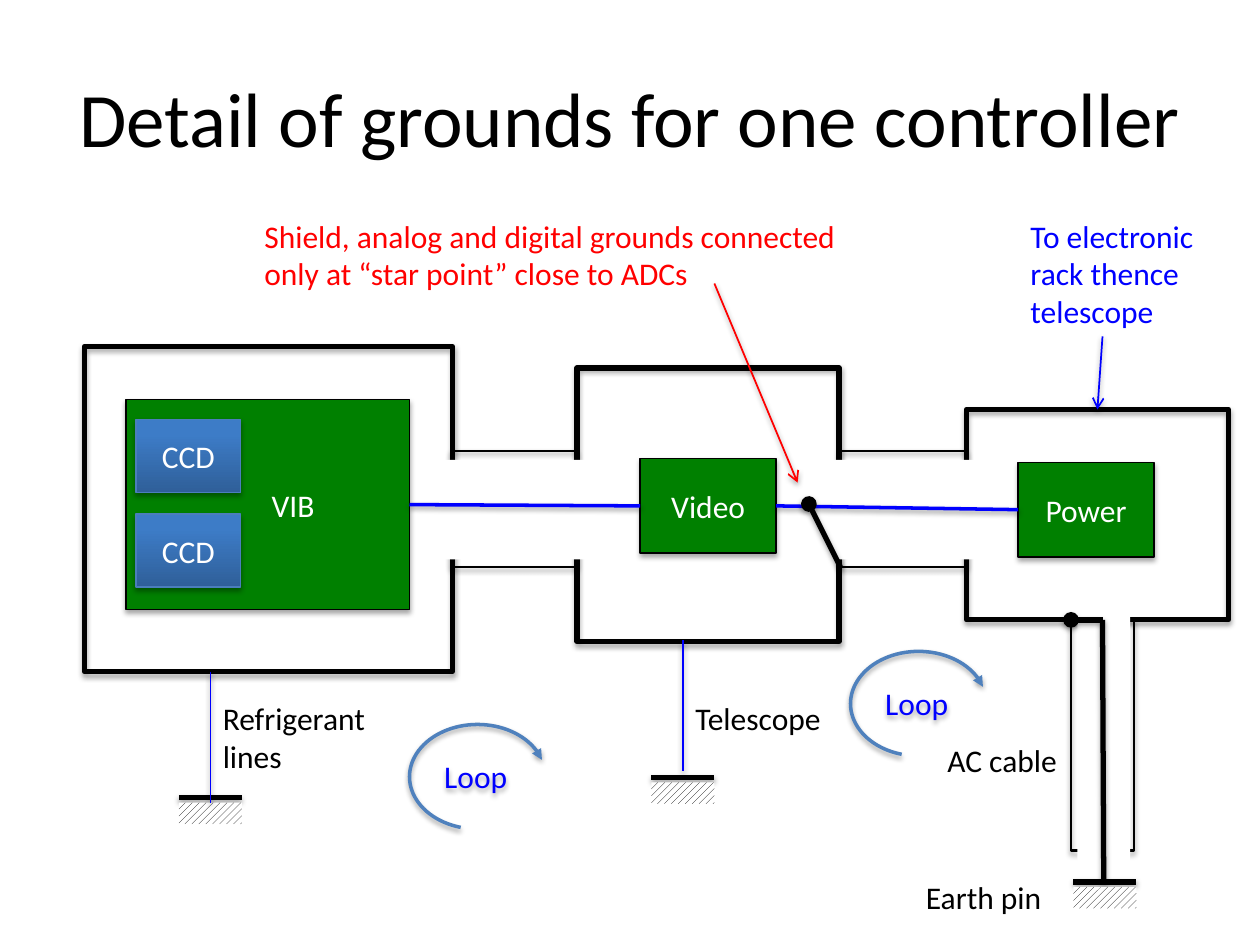
from lxml import etree
from pptx import Presentation
from pptx.dml.color import RGBColor
from pptx.enum.dml import MSO_PATTERN
from pptx.enum.shapes import MSO_CONNECTOR, MSO_SHAPE
from pptx.enum.text import MSO_ANCHOR, MSO_AUTO_SIZE, PP_ALIGN
from pptx.oxml.ns import qn
from pptx.util import Inches, Pt

RECTANGLE, ARC = MSO_SHAPE.RECTANGLE, MSO_SHAPE.ARC
STRAIGHT = MSO_CONNECTOR.STRAIGHT
HATCH = MSO_PATTERN.WIDE_UPWARD_DIAGONAL
MIDDLE, CENTER, LEFT = MSO_ANCHOR.MIDDLE, PP_ALIGN.CENTER, PP_ALIGN.LEFT
GROW = MSO_AUTO_SIZE.SHAPE_TO_FIT_TEXT
TOP_SIDE, LEFT_SIDE, RIGHT_SIDE = 0, 1, 3
BLACK, WHITE, BLUE, RED = "000000", "FFFFFF", "0000FF", "FF0000"
GREEN, STEEL = "008000", "4F81BD"


def color(value):
    """Turn a hex string into a colour."""
    return RGBColor.from_string(value)


def add_shadow(shape, distance=1.8, opacity=35):
    """Give a shape or connector a soft shadow straight below it."""
    properties = shape._element.spPr
    effects = properties.find(qn("a:effectLst"))
    if effects is None:
        effects = etree.SubElement(properties, qn("a:effectLst"))
    shadow = etree.SubElement(effects, qn("a:outerShdw"), blurRad=str(Pt(3.1)),
                              dist=str(Pt(distance)), dir="5400000", rotWithShape="0")
    tint = etree.SubElement(shadow, qn("a:srgbClr"), val=BLACK)
    etree.SubElement(tint, qn("a:alpha"), val=str(opacity * 1000))


def add_tail(shape, kind):
    """Put an arrowhead at the end of a line."""
    etree.SubElement(shape.line._get_or_add_ln(), qn("a:tailEnd"), type=kind)


def write(shape, text, ink, size=18, align=LEFT):
    """Write one paragraph into a shape."""
    shape.text_frame.word_wrap = True
    para = shape.text_frame.paragraphs[0]
    para.text = text
    para.alignment = align
    para.font.name = "Calibri"
    para.font.size = Pt(size)
    para.font.color.rgb = color(ink)


def add_label(page, text, left, top, width, height, ink=BLACK):
    """Add a text box that grows with its text."""
    label = page.shapes.add_textbox(Inches(left), Inches(top), Inches(width), Inches(height))
    write(label, text, ink)
    label.text_frame.auto_size = GROW


def add_title(page, text):
    """Add the centred heading."""
    title = page.shapes.add_textbox(Inches(0.5), Inches(0.3), Inches(9), Inches(1.25))
    write(title, text, BLACK, 44, CENTER)
    title.text_frame.vertical_anchor = MIDDLE


def add_box(shapes, left, top, width, height, fill=None, line=None, weight=0.75,
            text="", kind=RECTANGLE):
    """Add a shape, shadowed when it has an outline, with centred text."""
    box = shapes.add_shape(kind, Inches(left), Inches(top), Inches(width), Inches(height))
    box.shadow.inherit = False
    if fill:
        box.fill.solid()
        box.fill.fore_color.rgb = color(fill)
    else:
        box.fill.background()
    if line:
        box.line.color.rgb = color(line)
        box.line.width = Pt(weight)
        add_shadow(box)
    else:
        box.line.fill.background()
    if text:
        write(box, text, WHITE, align=CENTER)
        box.text_frame.vertical_anchor = MIDDLE
    return box


def add_ccd(page, top):
    """Add a detector box with a blue gradient."""
    ccd = add_box(page.shapes, 1.08, top, 0.83, 0.58, line="4B7EBC", text="CCD")
    ccd.fill.gradient()
    ccd.fill.gradient_angle = 90
    stops = zip(ccd.fill.gradient_stops, (0, 0.8), ("2F5F99", "3D7CC7"))
    for stop, position, value in stops:
        stop.position = position
        stop.color.rgb = color(value)


def add_line(shapes, start, end, ink=BLACK, weight=3, tail=None, begin=None, finish=None):
    """Add a shadowed line, joined to the (shape, side) pairs given."""
    line = shapes.add_connector(STRAIGHT, *map(Inches, start + end))
    line.line.color.rgb = color(ink)
    line.line.width = Pt(weight)
    if tail:
        add_tail(line, tail)
    add_shadow(line, 1.6, 38)
    if begin:
        line.begin_connect(*begin)
    if finish:
        line.end_connect(*finish)


def add_ground(page, left, top):
    """Add a ground symbol: a bar over a hatched strip."""
    ground = page.shapes.add_group_shape()
    add_line(ground.shapes, (left, top), (left + 0.5, top))
    strip = add_box(ground.shapes, left, top + 0.04, 0.5, 0.17)
    strip.fill.patterned()
    strip.fill.pattern = HATCH
    strip.fill.fore_color.rgb = color(BLACK)
    strip.fill.back_color.rgb = color(WHITE)


def add_loop(page, left, top):
    """Add a labelled ground loop arc with an arrowhead."""
    loop = add_box(page.shapes, left, top, 1.08, 0.83, line=STEEL, weight=2,
                   text="Loop", kind=ARC)
    loop.adjustments[0] = 65.03
    loop.adjustments[1] = 207.19
    loop.text_frame.paragraphs[0].font.color.rgb = color(BLUE)
    add_tail(loop, "triangle")


def main():
    """Build the grounding diagram."""
    deck = Presentation()
    deck.slide_width, deck.slide_height = Inches(10), Inches(7.5)
    page = deck.slides.add_slide(deck.slide_layouts[6])
    shapes = page.shapes

    vib = add_box(shapes, 1, 3.17, 2.25, 1.67, GREEN, BLACK, text="VIB")
    vib.text_frame.margin_left = Inches(0.5)
    add_box(shapes, 0.67, 2.75, 2.92, 2.58, line=BLACK, weight=3)
    for top in (4.08, 3.33):
        add_ccd(page, top)
    add_box(shapes, 4.58, 2.92, 2.08, 2.17, line=BLACK, weight=3)
    power_case = add_box(shapes, 7.67, 3.25, 2.08, 1.67, line=BLACK, weight=3)
    for left in (3.58, 6.67):
        add_box(shapes, left, 3.58, 1, 0.92, line=BLACK, weight=1.5)
    add_box(shapes, 3.42, 3.65, 4.67, 0.79, WHITE)
    cable = add_box(shapes, 8.5, 4.92, 0.5, 1.83, line=BLACK, weight=1.5)
    add_box(shapes, 8.55, 4.42, 0.42, 2.58, WHITE)

    video = add_box(shapes, 5.08, 3.64, 1.08, 0.75, GREEN, BLACK, text="Video")
    add_line(shapes, (3.25, 4), (5.08, 4.01), BLUE, 2,
             begin=(vib, RIGHT_SIDE), finish=(video, LEFT_SIDE))
    power = add_box(shapes, 8.08, 3.67, 1.08, 0.75, GREEN, BLACK, text="Power")
    add_line(shapes, (6.17, 4.01), (8.08, 4.04), BLUE, 2,
             begin=(video, RIGHT_SIDE), finish=(power, LEFT_SIDE))

    add_line(shapes, (6.67, 4.5), (6.42, 4), tail="oval")
    add_line(shapes, (8.75, 4.92), (8.5, 4.92), tail="oval", begin=(cable, TOP_SIDE))
    add_line(shapes, (8.75, 4.92), (8.76, 7), begin=(cable, TOP_SIDE))
    add_ground(page, 8.52, 7)
    add_ground(page, 1.42, 6.33)
    add_line(shapes, (1.67, 5.33), (1.67, 6.37), BLUE, 1)
    add_line(shapes, (5.42, 5.08), (5.42, 6.12), BLUE, 1)
    add_ground(page, 5.17, 6.17)

    add_label(page, "Earth pin", 7.25, 6.92, 1.67, 0.4)
    add_label(page, "AC cable", 7.42, 5.83, 1.08, 0.4)
    add_label(page, "Telescope", 5.42, 5.5, 1.42, 0.4)
    add_label(page, "Refrigerant lines", 1.67, 5.5, 1.83, 0.71)
    add_label(page, "To electronic rack thence telescope", 8.08, 1.67, 1.92, 1.01, BLUE)
    add_line(shapes, (8.75, 2.67), (8.71, 3.25), BLUE, 1, "arrow",
             finish=(power_case, TOP_SIDE))
    add_title(page, "Detail of grounds for one controller")
    add_label(page, "Shield, analog and digital grounds connected only at "
              "“star point” close to ADCs", 2, 1.67, 5, 0.71, RED)
    add_line(shapes, (5.67, 2.25), (6.33, 3.83), RED, 1, "arrow")
    add_loop(page, 3.25, 5.75)
    add_loop(page, 6.75, 5.17)
    deck.save("out.pptx")


if __name__ == "__main__":
    main()
